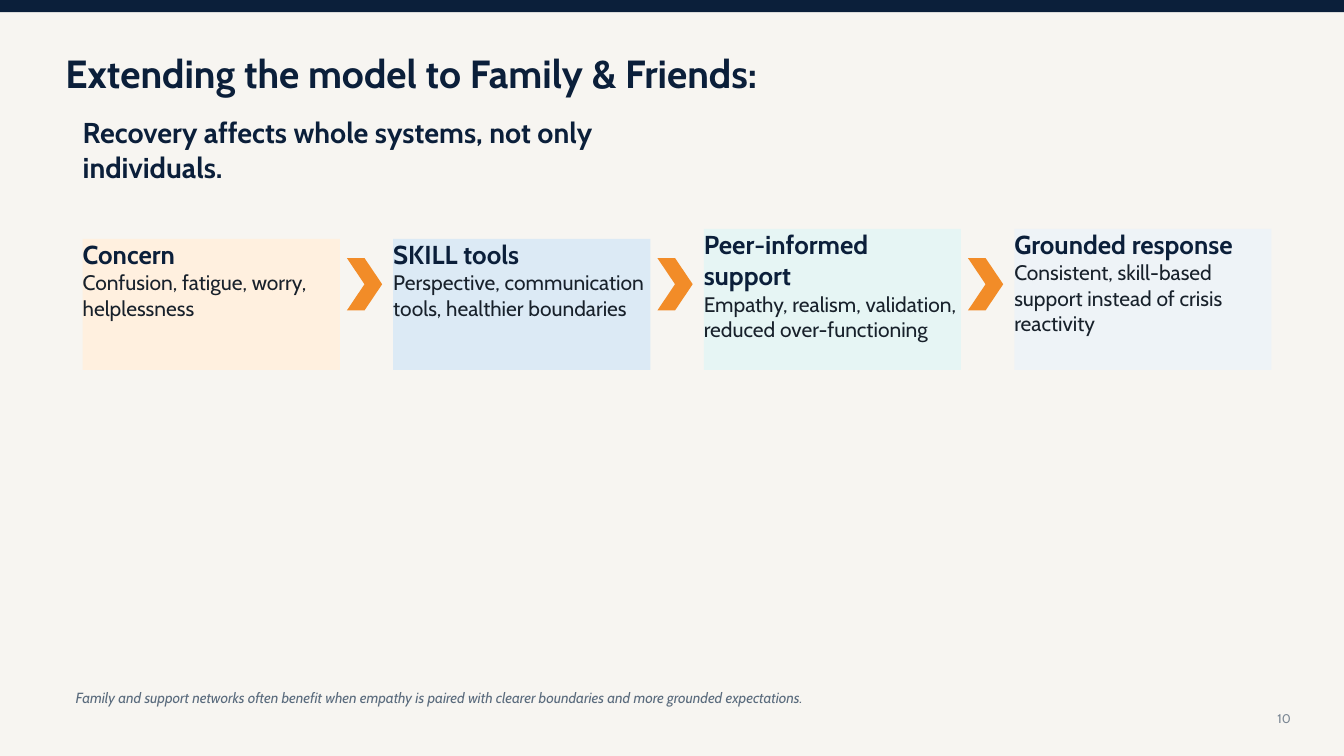
import pptx
import pptx.util
import pptx.dml.color
import pptx.enum.shapes
import pptx.enum.text
from dataclasses import dataclass

Inches = pptx.util.Inches
Shape = pptx.enum.shapes.MSO_SHAPE
Anchor = pptx.enum.text.MSO_ANCHOR
Align = pptx.enum.text.PP_ALIGN


@dataclass(frozen=True)
class Theme:
    face: str = "Cabin"
    paper: str = "F7F5F1"
    navy: str = "0B1F3A"
    ink: str = "18212B"
    slate: str = "5A6B7D"
    grey: str = "7B8794"
    orange: str = "F28C28"
    title: float = 28
    lead: float = 20.5
    head: float = 18.5
    body: float = 15
    note: float = 10.5
    page: float = 9


THEME = Theme()

STEPS = [
    ("Concern", "Confusion, fatigue, worry, helplessness", "FFF0DF", 1.3),
    ("SKILL tools", "Perspective, communication tools, healthier boundaries",
     "DCEAF5", 1.3),
    ("Peer-informed support",
     "Empathy, realism, validation, reduced over-functioning", "E6F5F4", 1.4),
    ("Grounded response",
     "Consistent, skill-based support instead of crisis reactivity",
     "EEF3F7", 1.4),
]


def rgb(code):
    return pptx.dml.color.RGBColor.from_string(code)


def style(para, text, size, color, bold=False, italic=False):
    para.text = text
    font = para.font
    font.name, font.size = THEME.face, pptx.util.Pt(size)
    font.bold, font.italic = bold, italic
    font.color.rgb = rgb(color)


def prepare(frame, anchor, inset=0):
    frame.word_wrap = True
    frame.vertical_anchor = anchor
    frame.margin_left = frame.margin_right = Inches(inset)
    frame.margin_top = frame.margin_bottom = Inches(inset / 2)


def label(slide, box, text, size, color, anchor=Anchor.MIDDLE, inset=0,
          align=Align.LEFT, **look):
    frame = slide.shapes.add_textbox(*map(Inches, box)).text_frame
    prepare(frame, anchor, inset)
    para = frame.paragraphs[0]
    style(para, text, size, color, **look)
    para.alignment = align


def block(slide, kind, box, color):
    shape = slide.shapes.add_shape(kind, *map(Inches, box))
    shape.shadow.inherit = False
    shape.fill.solid()
    shape.fill.fore_color.rgb = rgb(color)
    shape.line.fill.background()
    return shape


def card(slide, box, head, body, color):
    frame = block(slide, Shape.RECTANGLE, box, color).text_frame
    prepare(frame, Anchor.TOP)
    first, second = frame.paragraphs[0], frame.add_paragraph()
    style(first, head, THEME.head, THEME.navy, bold=True)
    style(second, body, THEME.body, THEME.ink)
    first.alignment = second.alignment = Align.LEFT


def flow(slide, box):
    """Cards share a bottom edge, with a chevron in each gap."""
    left, top, width, height = box
    wide = 2.55
    pitch = (width - wide) / (len(STEPS) - 1)
    for i, (head, body, color, tall) in enumerate(STEPS):
        x = left + i * pitch
        card(slide, (x, top + height - tall, wide, tall), head, body, color)
        if i < len(STEPS) - 1:
            block(slide, Shape.CHEVRON,
                  (x + wide + 0.07, top + 0.29, 0.35, 0.52), THEME.orange)


def header(slide, box):
    left, top, width, _ = box
    block(slide, Shape.RECTANGLE, (left, top, width, 0.12), THEME.navy)
    label(slide, (left + 0.65, top + 0.57, 8.9, 0.31),
          "Extending the model to Family & Friends:",
          THEME.title, THEME.navy, bold=True)
    label(slide, (left + 0.82, top + 1.43, 5.9, 0.11),
          "Recovery affects whole systems, not only individuals.",
          THEME.lead, THEME.navy, bold=True)


def footer(slide, box):
    left, top, width, _ = box
    label(slide, (left + 0.75, top, 11.6, 0.24),
          "Family and support networks often benefit when empathy is paired "
          "with clearer boundaries and more grounded expectations.",
          THEME.note, THEME.slate, italic=True)
    label(slide, (left + width - 0.78, top + 0.2, 0.35, 0.22), "10",
          THEME.page, THEME.grey, Anchor.TOP, 0.1, Align.RIGHT)


def main():
    deck = pptx.Presentation()
    deck.slide_width, deck.slide_height = Inches(13.33), Inches(7.5)
    slide = deck.slides.add_slide(deck.slide_layouts[6])
    slide.background.fill.solid()
    slide.background.fill.fore_color.rgb = rgb(THEME.paper)
    header(slide, (0, 0, 13.33, 2))
    flow(slide, (0.82, 2.27, 11.79, 1.4))
    footer(slide, (0, 6.8, 13.33, 0.7))
    deck.save("out.pptx")


if __name__ == "__main__":
    main()
